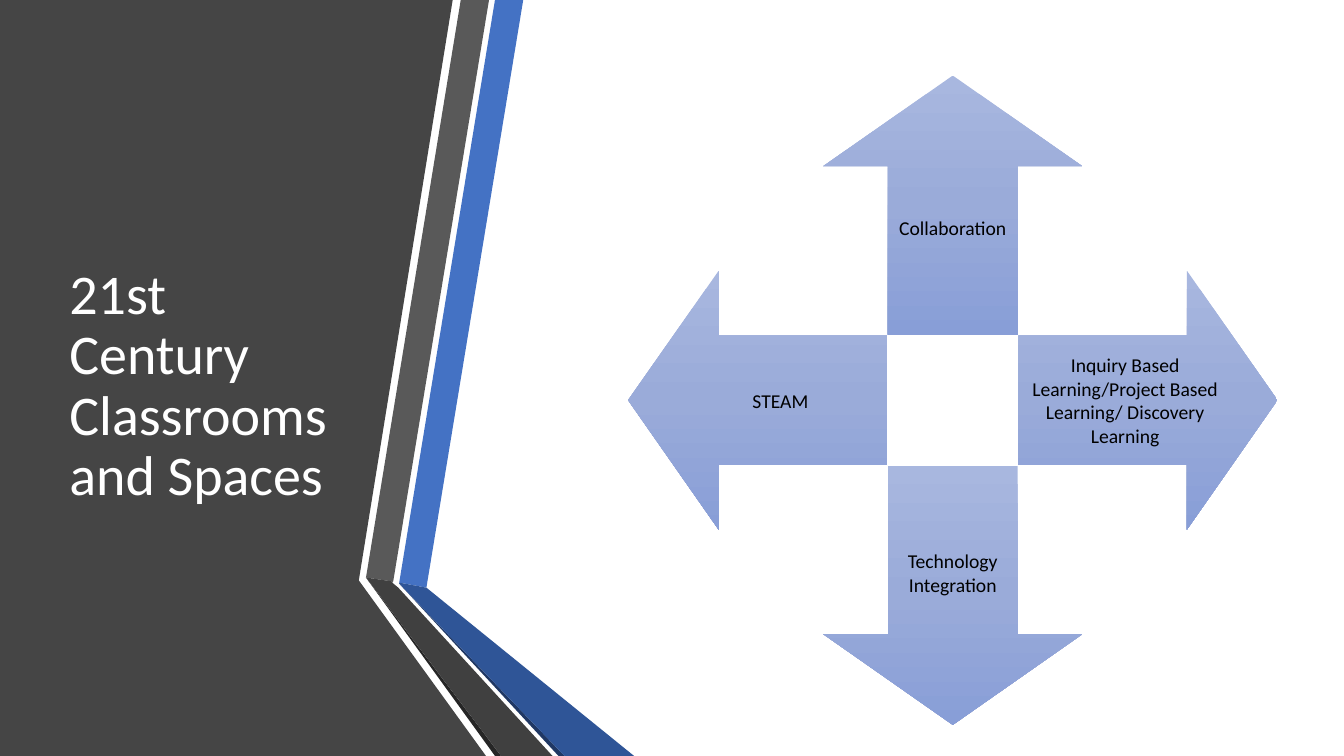
from pptx import Presentation
from pptx.dml.color import RGBColor
from pptx.enum.shapes import MSO_SHAPE
from pptx.enum.text import MSO_ANCHOR, PP_ALIGN
from pptx.util import Inches, Pt
from lxml import etree

WHITE = RGBColor(0xFF, 0xFF, 0xFF)
BLACK = RGBColor(0x00, 0x00, 0x00)
PANEL_GRAY = RGBColor(0x45, 0x45, 0x45)
STRIPE_BLUE = RGBColor(0x44, 0x72, 0xC4)
STRIPE_GRAY = RGBColor(0x59, 0x59, 0x59)
EDGE_BLACK = RGBColor(0x26, 0x26, 0x26)
EDGE_NAVY = RGBColor(0x20, 0x38, 0x64)
FOLD_BLUE = RGBColor(0x2F, 0x55, 0x97)
FOLD_GRAY = RGBColor(0x40, 0x40, 0x40)
ARROW_STOPS = [(0, RGBColor(0xA8, 0xB7, 0xDF)),
               (50, RGBColor(0x9A, 0xAB, 0xD9)),
               (100, RGBColor(0x88, 0x9E, 0xD7))]
DRAWING = "{http://schemas.openxmlformats.org/drawingml/2006/main}"

deck = Presentation()
deck.slide_width = Inches(13.33)
deck.slide_height = Inches(7.5)
page = deck.slides.add_slide(deck.slide_layouts[6])


def add_text(left, top, width, height, text, size, color, align, spacing):
    box = page.shapes.add_textbox(Inches(left), Inches(top), Inches(width), Inches(height))
    frame = box.text_frame
    frame.word_wrap = True
    frame.vertical_anchor = MSO_ANCHOR.MIDDLE
    para = frame.paragraphs[0]
    para.alignment = align
    para.line_spacing = spacing
    span = para.add_run()
    span.text = text
    span.font.name = "Calibri"
    span.font.size = Pt(size)
    span.font.color.rgb = color


def fill_gradient(shape):
    """Light-to-dark, top to bottom, whichever way the shape is turned."""
    shape.fill.gradient()
    gradient = shape.fill._xPr.find(DRAWING + "gradFill")
    gradient.set("rotWithShape", "0")
    for child in list(gradient):
        gradient.remove(child)
    stops = etree.SubElement(gradient, DRAWING + "gsLst")
    for percent, color in ARROW_STOPS:
        stop = etree.SubElement(stops, DRAWING + "gs", pos=str(percent * 1000))
        etree.SubElement(stop, DRAWING + "srgbClr", val=str(color))
    etree.SubElement(gradient, DRAWING + "lin", ang="5400000", scaled="0")


# Dark panel and folded ribbons
ribbons = [
    (PANEL_GRAY, [(0, 0), (4.49, 0), (3.56, 5.75), (3.56, 5.76), (4.82, 7.5), (0, 7.5)]),
    (STRIPE_BLUE, [(3.96, 5.78), (4.23, 5.83), (5.19, 0), (4.91, 0)]),
    (STRIPE_GRAY, [(4.85, 0), (4.57, 0), (3.63, 5.73), (3.9, 5.77)]),
    (EDGE_BLACK, [(3.63, 5.73), (4.91, 7.5), (4.97, 7.5)]),
    (EDGE_NAVY, [(3.96, 5.79), (5.54, 7.5), (5.6, 7.5)]),
    (FOLD_BLUE, [(3.96, 5.79), (5.6, 7.5), (6.29, 7.5), (4.23, 5.83), (3.96, 5.78)]),
    (FOLD_GRAY, [(5.48, 7.5), (3.95, 5.83), (3.89, 5.78), (3.9, 5.77), (3.63, 5.73),
                 (4.97, 7.5)]),
]
for color, points in ribbons:
    corners = [(Inches(x), Inches(y)) for x, y in points]
    builder = page.shapes.build_freeform(*corners[0])
    builder.add_line_segments(corners[1:], close=True)
    ribbon = builder.convert_to_shape()
    ribbon.shadow.inherit = False
    ribbon.fill.solid()
    ribbon.fill.fore_color.rgb = color
    ribbon.line.fill.background()

# Title
add_text(0.59, 1.35, 2.9, 4.98, "21st Century Classrooms and Spaces", 40, WHITE,
         PP_ALIGN.LEFT, 0.9)

# Four arrows around a center, each with a label on its shaft
CENTER_X, CENTER_Y = 9.45, 3.97
ARROW = 2.57
SHAFT = 1.28
LABEL = 2.12
ARROW_REACH = 1.935
LABEL_REACH = (SHAFT + LABEL) / 2 + 0.01
arrows = [
    (0, 0, -1, "Collaboration"),
    (90, 1, 0, "Inquiry Based Learning/Project Based Learning/ Discovery Learning"),
    (180, 0, 1, "Technology Integration"),
    (270, -1, 0, "STEAM"),
]
for turn, step_x, step_y, label in arrows:
    arrow = page.shapes.add_shape(
        MSO_SHAPE.UP_ARROW,
        Inches(CENTER_X + step_x * ARROW_REACH - ARROW / 2),
        Inches(CENTER_Y + step_y * ARROW_REACH - ARROW / 2),
        Inches(ARROW), Inches(ARROW))
    arrow.rotation = turn
    arrow.adjustments[0] = 0.5
    arrow.adjustments[1] = 0.35
    arrow.shadow.inherit = False
    arrow.line.fill.background()
    fill_gradient(arrow)

    width, height = (LABEL, SHAFT) if step_x else (SHAFT, LABEL)
    add_text(CENTER_X + step_x * LABEL_REACH - width / 2,
             CENTER_Y + step_y * LABEL_REACH - height / 2,
             width, height, label, 14, BLACK, PP_ALIGN.CENTER, 1.0)

deck.save("out.pptx")
